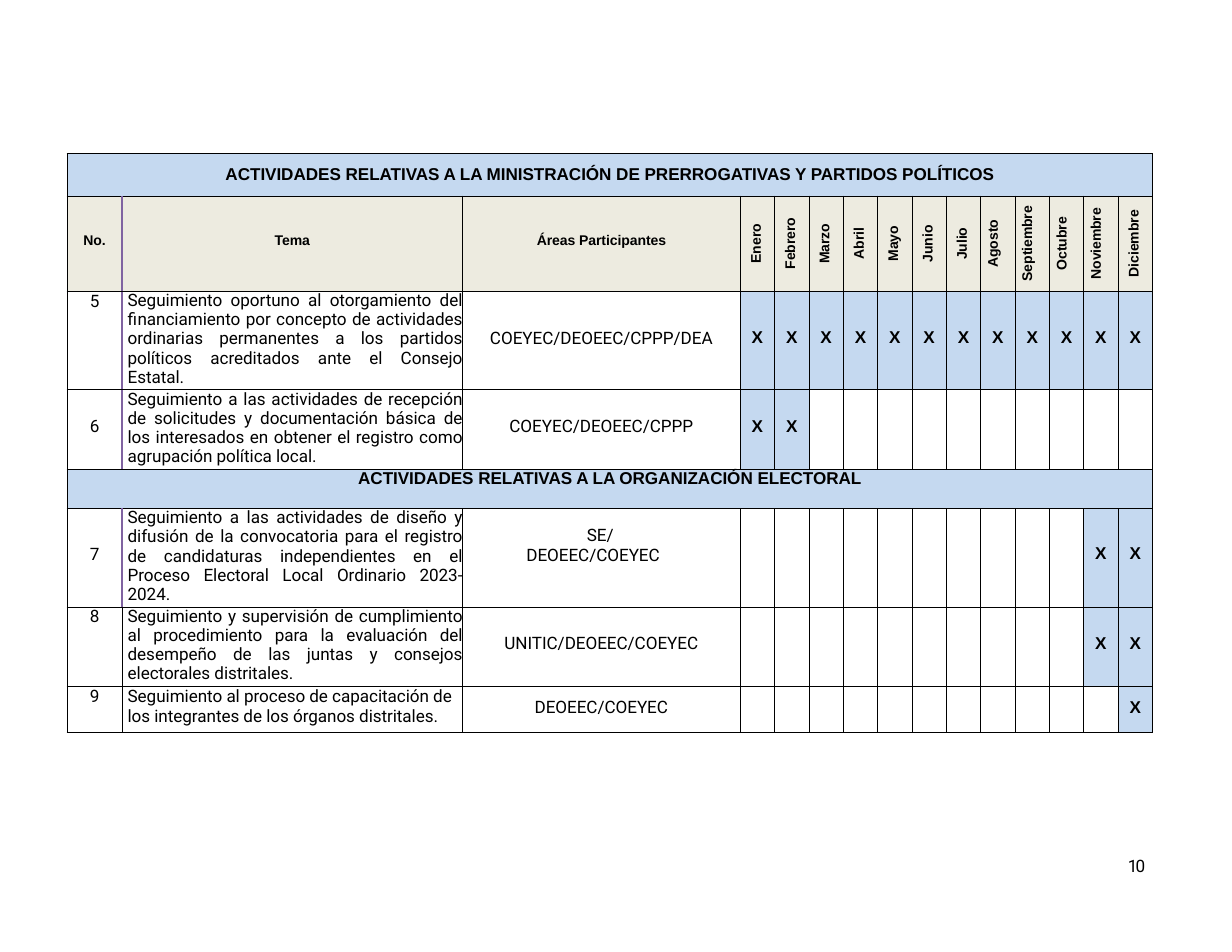
from lxml.etree import SubElement
from pptx import Presentation
from pptx.dml.color import RGBColor
from pptx.enum.text import PP_ALIGN as Align
from pptx.oxml.ns import qn
from pptx.util import Emu, Inches, Pt

WIDTH, HEIGHT = Inches(11), Inches(8.5)
GRID_COLS, GRID_ROWS = 110, 85
BLACK, PURPLE, BLUE, BEIGE = "000000", "8063A1", "C5D9F0", "EDEBE0"
HEADING, BODY = "Arial", "Roboto"

MONTHS = ["Enero", "Febrero", "Marzo", "Abril", "Mayo", "Junio", "Julio",
          "Agosto", "Septiembre", "Octubre", "Noviembre", "Diciembre"]
FIRST_MONTH = 3
COLUMNS = [4.9, 30.4, 24.8] + [3.07] * len(MONTHS)
ROWS = [3.8, 8.5, 8.8, 7.1, 3.5, 8.8, 7.1, 4]

# row: section title, top inset
SECTIONS = {
    0: ("ACTIVIDADES RELATIVAS A LA MINISTRACIÓN DE PRERROGATIVAS "
        "Y PARTIDOS POLÍTICOS", 1),
    4: ("ACTIVIDADES RELATIVAS A LA ORGANIZACIÓN ELECTORAL", 0),
}
# row: number, its top inset, topic, areas, top inset of areas and marks, marked months
ACTIVITIES = {
    2: ("5", 0, "Seguimiento oportuno al otorgamiento del financiamiento por "
        "concepto de actividades ordinarias permanentes a los partidos "
        "políticos acreditados ante el Consejo Estatal.",
        "COEYEC/DEOEEC/CPPP/DEA", 3.3, range(12)),
    3: ("6", 2.4, "Seguimiento a las actividades de recepción de solicitudes y "
        "documentación básica de los interesados en obtener el registro como "
        "agrupación política local.",
        "COEYEC/DEOEEC/CPPP", 2.4, range(2)),
    5: ("7", 3.2, "Seguimiento a las actividades de diseño y difusión de la "
        "convocatoria para el registro de candidaturas independientes en el "
        "Proceso Electoral Local Ordinario 2023-2024.",
        "SE/ DEOEEC/COEYEC", 3.2, range(10, 12)),
    6: ("8", 0, "Seguimiento y supervisión de cumplimiento al procedimiento para "
        "la evaluación del desempeño de las juntas y consejos electorales "
        "distritales.",
        "UNITIC/DEOEEC/COEYEC", 2.4, range(10, 12)),
    7: ("9", 0, "Seguimiento al proceso de capacitación de los integrantes de "
        "los órganos distritales.",
        "DEOEEC/COEYEC", 1, range(11, 12)),
}
PURPLE_ROWS = {1, 2, 3, 5}


def color(value):
    return RGBColor.from_string(value)


def across(cols):
    return Emu(round(cols * WIDTH / GRID_COLS))


def down(rows):
    return Emu(round(rows * HEIGHT / GRID_ROWS))


class Page:
    def __init__(self, slide):
        self.slide = slide

    def paragraph(self, tf, text, font=BODY, size=11, bold=False, align=Align.LEFT,
                  line=None, left=0, first=0, tracking=-5):
        """Fill the first paragraph; tracking is in hundredths of a point."""
        p = tf.paragraphs[0]
        p.alignment = align
        if line:
            p.line_spacing = line
        pPr = p._p.get_or_add_pPr()
        pPr.set("marL", str(across(left)))
        pPr.set("indent", str(across(first)))
        r = p.add_run()
        r.text = text
        r.font.name, r.font.size, r.font.bold = font, Pt(size), bold
        r.font.color.rgb = color(BLACK)
        r._r.get_or_add_rPr().set("spc", str(tracking))

    def table(self, x, y, columns, rows):
        frame = self.slide.shapes.add_table(
            len(rows), len(columns), across(x), down(y),
            across(sum(columns)), down(sum(rows)))
        table = frame.table
        table.first_row = table.horz_banding = False
        for column, width in zip(table.columns, columns):
            column.width = across(width)
        for row, height in zip(table.rows, rows):
            row.height = down(height)
        return table

    def borders(self, cell, **sides):
        """Draw all four sides, thin and black unless given as (color, points)."""
        tcPr = cell._tc.get_or_add_tcPr()
        for side in "LRTB":
            line_color, width = sides.get(side, (BLACK, 0.5))
            ln = SubElement(tcPr, qn(f"a:ln{side}"), w=str(Pt(width)))
            fill = SubElement(ln, qn("a:solidFill"))
            SubElement(fill, qn("a:srgbClr"), val=line_color)

    def fill(self, cell, value=None):
        if value:
            cell.fill.solid()
            cell.fill.fore_color.rgb = color(value)
        else:
            cell.fill.background()

    def cell(self, cell, text, top=0, fill=None, vertical=False, **style):
        cell.margin_left = cell.margin_right = cell.margin_bottom = 0
        cell.margin_top = down(top)
        if vertical:
            cell._tc.get_or_add_tcPr().set("vert", "vert270")
        self.fill(cell, fill)
        self.paragraph(cell.text_frame, text, **style)

    def text(self, x, y, w, h, text, **style):
        tf = self.slide.shapes.add_textbox(
            across(x), down(y), across(w), down(h)).text_frame
        tf.word_wrap = True
        tf.margin_left = tf.margin_right = tf.margin_top = tf.margin_bottom = 0
        self.paragraph(tf, text, **style)


def draw_frame(page, table):
    for row in range(len(ROWS)):
        for col in range(len(COLUMNS)):
            sides = {"L": (BLACK, 0.75)} if col == 0 else {}
            if row in PURPLE_ROWS and col < 2:
                sides["RL"[col]] = (PURPLE, 1)
            page.borders(table.cell(row, col), **sides)
            page.fill(table.cell(row, col))


def draw_headings(page, table):
    style = dict(font=HEADING, bold=True, align=Align.CENTER)
    for row, (title, top) in SECTIONS.items():
        table.cell(row, 0).merge(table.cell(row, len(COLUMNS) - 1))
        page.cell(table.cell(row, 0), title, top, BLUE, **style)
    for col, label in enumerate(["No.", "Tema", "Áreas Participantes"]):
        page.cell(table.cell(1, col), label, 3.3, BEIGE, size=9, **style)
    for month, label in enumerate(MONTHS):
        top = 0.4 if 7 <= month <= 10 else 0.7
        page.cell(table.cell(1, FIRST_MONTH + month), label, top, BEIGE,
                  vertical=True, size=9, **style)


def draw_activities(page, table):
    for row, (number, number_top, topic, areas, top, months) in ACTIVITIES.items():
        page.cell(table.cell(row, 0), number, number_top, align=Align.CENTER,
                  line=Pt(12.8))
        last = row == len(ROWS) - 1
        page.cell(table.cell(row, 1), topic, left=0.5,
                  align=Align.LEFT if last else Align.JUSTIFY,
                  line=Pt(12.8) if last else 0.96)
        if areas.startswith("SE/"):
            page.cell(table.cell(row, 2), areas, top - 1.6, left=5.7, first=5.4,
                      line=Pt(12.6))
        else:
            page.cell(table.cell(row, 2), areas, top, align=Align.CENTER)
        for month in months:
            page.cell(table.cell(row, FIRST_MONTH + month), "X", top, BLUE,
                      font=HEADING, bold=True, align=Align.CENTER)


def main():
    prs = Presentation()
    prs.slide_width, prs.slide_height = WIDTH, HEIGHT
    page = Page(prs.slides.add_slide(prs.slide_layouts[6]))
    table = page.table(6, 13.7, COLUMNS, ROWS)
    draw_frame(page, table)
    draw_headings(page, table)
    draw_activities(page, table)
    page.text(100.3, 76.4, 2.2, 2, "10", left=0.4, tracking=-110)
    prs.save("out.pptx")


if __name__ == "__main__":
    main()
